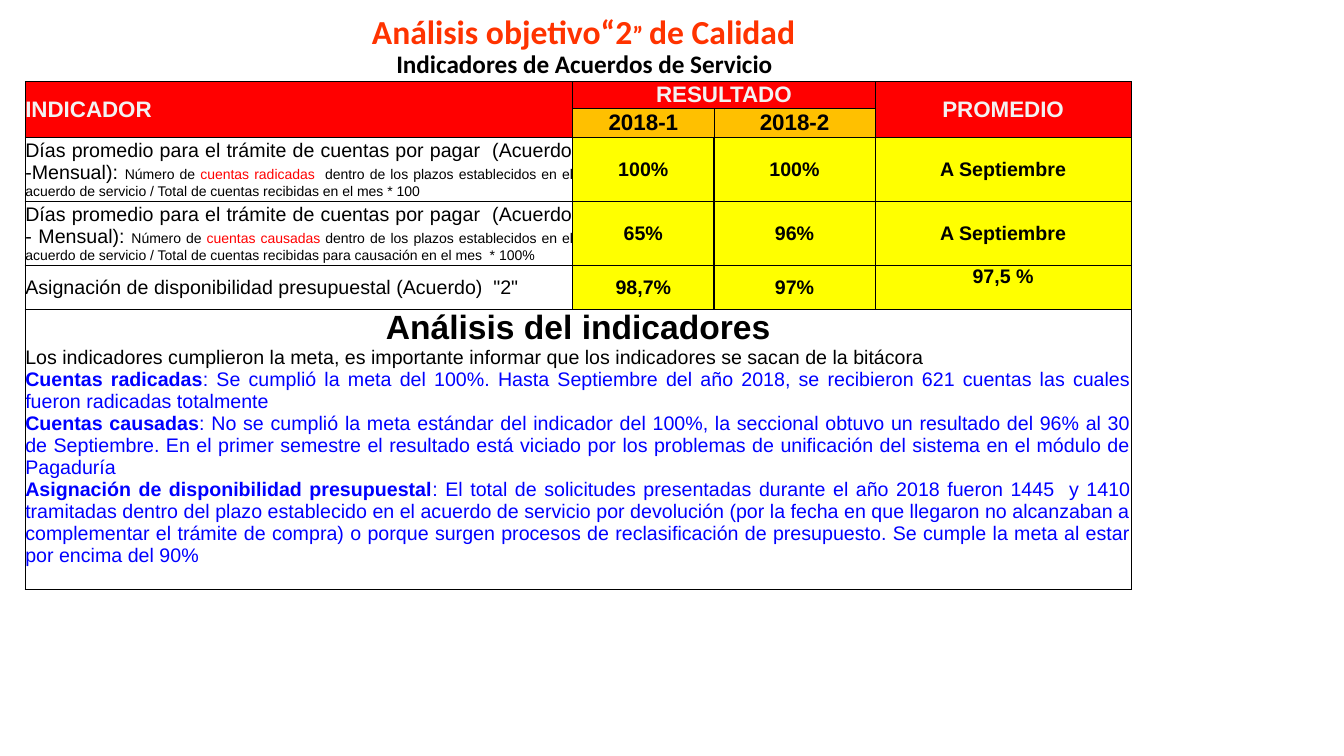
"""Build the slide on quality goal 2 with its table of service indicators."""
import dataclasses
import typing

import pptx
import pptx.dml.color
import pptx.enum.text
import pptx.oxml
import pptx.oxml.ns
import pptx.util

ALIGN = pptx.enum.text.PP_ALIGN
ANCHOR = pptx.enum.text.MSO_ANCHOR
WIDTH, HEIGHT = pptx.util.Inches(13.33), pptx.util.Inches(7.5)
COLS = (40.74, 10.5, 12, 19.05)
ROWS = (3.33, 3.87, 8, 8, 5.8, 37.07)


@dataclasses.dataclass(frozen=True)
class Theme:
    """Colours, fonts and type sizes of the slide."""
    title: str = "FF3300"
    black: str = "000000"
    white: str = "FFFFFF"
    pale: str = "F2F2F2"
    red: str = "FF0000"
    gold: str = "FFC000"
    lemon: str = "FFFF00"
    blue: str = "0000FF"
    body: str = "Arial"
    head: str = "Calibri"
    big: int = 24
    sub: int = 18
    label: int = 16
    text: int = 14
    note: int = 10


THEME = Theme()


class Run(typing.NamedTuple):
    """A stretch of text in one format."""
    text: str
    size: int = THEME.text
    color: str = THEME.black
    bold: bool = False
    font: str = THEME.body


class Para(typing.NamedTuple):
    """A paragraph, with None standing for a line break."""
    runs: tuple[Run | None, ...]
    align: ALIGN = ALIGN.JUSTIFY


class Cell(typing.NamedTuple):
    """A table cell with its place, span and look."""
    row: int
    col: int
    paras: tuple[Para, ...]
    fill: str
    down: int = 1
    over: int = 1
    anchor: ANCHOR = ANCHOR.MIDDLE


def across(share: float) -> int:
    """Turn a percentage of the slide width into a length."""
    return int(WIDTH * share / 100)


def along(share: float) -> int:
    """Turn a percentage of the slide height into a length."""
    return int(HEIGHT * share / 100)


def write(para, text: str, *, size: int, color: str, bold: bool, font: str) -> None:
    """Add a run of text in the given format."""
    run = para.add_run()
    run.text = text
    run.font.size = pptx.util.Pt(size)
    run.font.bold = bold
    run.font.name = font
    run.font.color.rgb = pptx.dml.color.RGBColor.from_string(color)


def fill_text(frame, paras: tuple[Para, ...], space: float = 1.0) -> None:
    """Write paragraphs into a text frame."""
    frame.word_wrap = True
    for count, item in enumerate(paras):
        para = frame.add_paragraph() if count else frame.paragraphs[0]
        para.alignment = item.align
        para.line_spacing = space
        for run in item.runs:
            if run is None:
                para.add_line_break()
            else:
                write(para, run.text, size=run.size, color=run.color,
                      bold=run.bold, font=run.font)


def edge(cell, width: float) -> None:
    """Draw the four borders ahead of the cell fill."""
    props = cell._tc.get_or_add_tcPr()
    for place, side in enumerate(("lnL", "lnR", "lnT", "lnB")):
        props.insert(place, pptx.oxml.parse_xml(
            f'<a:{side} {pptx.oxml.ns.nsdecls("a")} w="{pptx.util.Pt(width)}">'
            f'<a:solidFill><a:srgbClr val="{THEME.black}"/></a:solidFill></a:{side}>'))


def draw_cell(table, item: Cell) -> None:
    """Merge, paint and fill one cell of the table."""
    last_row, last_col = item.row + item.down - 1, item.col + item.over - 1
    cell = table.cell(item.row, item.col)
    if item.down > 1 or item.over > 1:
        cell.merge(table.cell(last_row, last_col))
    for row in range(item.row, last_row + 1):
        for col in range(item.col, last_col + 1):
            part = table.cell(row, col)
            part.fill.solid()
            part.fill.fore_color.rgb = pptx.dml.color.RGBColor.from_string(item.fill)
            edge(part, 0.5 if row < 2 else 1)
    cell.margin_left = cell.margin_right = cell.margin_top = cell.margin_bottom = 0
    cell.vertical_anchor = item.anchor
    fill_text(cell.text_frame, item.paras)


def head(row: int, col: int, text: str, down: int = 1, over: int = 1) -> Cell:
    """Describe a header cell."""
    color, fill = (THEME.black, THEME.gold) if row else (THEME.pale, THEME.red)
    align = ALIGN.CENTER if col else ALIGN.LEFT
    run = Run(text, THEME.label, color, True)
    return Cell(row, col, (Para((run,), align),), fill, down, over)


def score(row: int, col: int, text: str) -> Cell:
    """Describe a result cell."""
    anchor = ANCHOR.TOP if (row, col) == (4, 3) else ANCHOR.MIDDLE
    para = Para((Run(text, bold=True),), ALIGN.CENTER)
    return Cell(row, col, (para,), THEME.lemon, anchor=anchor)


def rule(name: str, key: str, rest: str) -> Para:
    """Describe an indicator and the formula behind it."""
    return Para((Run(name), Run("Número de ", THEME.note),
                 Run(key, THEME.note, THEME.red), Run(rest, THEME.note)))


def finding(name: str, rest: str) -> Para:
    """Describe a finding with a bold lead."""
    return Para((Run(name, color=THEME.blue, bold=True), Run(rest, color=THEME.blue)))


TITLE = Para((
    Run("Análisis objetivo“2", THEME.big, THEME.title, True, THEME.head),
    Run("” ", THEME.sub, THEME.title, True, THEME.head),
    Run("de Calidad ", THEME.big, THEME.title, True, THEME.head),
    None,
    Run("Indicadores de Acuerdos de Servicio ", THEME.sub, bold=True, font=THEME.head),
), ALIGN.CENTER)

HEADS = (head(0, 0, "INDICADOR", down=2), head(0, 1, "RESULTADO", over=2),
         head(0, 3, "PROMEDIO", down=2), head(1, 1, "2018-1"), head(1, 2, "2018-2"))

DATA = (
    (rule("Días promedio para el trámite de cuentas por pagar  (Acuerdo -Mensual): ",
          "cuentas radicadas", "  dentro de los plazos establecidos en el acuerdo de "
          "servicio / Total de cuentas recibidas en el mes * 100"),
     "100%", "100%", "A Septiembre"),
    (rule("Días promedio para el trámite de cuentas por pagar  (Acuerdo - Mensual): ",
          "cuentas causadas ", "dentro de los plazos establecidos en el acuerdo de "
          "servicio / Total de cuentas recibidas para causación en el mes  * 100%"),
     "65%", "96%", "A Septiembre"),
    (Para((Run('Asignación de disponibilidad presupuestal (Acuerdo)  "2"'),)),
     "98,7%", "97%", "97,5 %"),
)

REVIEW = Cell(5, 0, (
    Para((Run("Análisis del indicadores", THEME.big, bold=True),), ALIGN.CENTER),
    Para((Run("Los indicadores cumplieron la meta, es importante informar que los "
              "indicadores se sacan de la bitácora"),)),
    finding("Cuentas radicadas", ": Se cumplió la meta del 100%. Hasta Septiembre del "
            "año 2018, se recibieron 621 cuentas las cuales fueron radicadas totalmente"),
    finding("Cuentas causadas", ": No se cumplió la meta estándar del indicador del "
            "100%, la seccional obtuvo un resultado del 96% al 30 de Septiembre. En el "
            "primer semestre el resultado está viciado por los problemas de unificación "
            "del sistema en el módulo de Pagaduría"),
    finding("Asignación de disponibilidad presupuestal", ": El total de solicitudes "
            "presentadas durante el año 2018 fueron 1445  y 1410 tramitadas dentro del "
            "plazo establecido en el acuerdo de servicio por devolución (por la fecha en "
            "que llegaron no alcanzaban a complementar el trámite de compra) o porque "
            "surgen procesos de reclasificación de presupuesto. Se cumple la meta al "
            "estar por encima del 90%"),
), THEME.white, over=4, anchor=ANCHOR.TOP)


def main() -> None:
    """Draw the slide and save it."""
    deck = pptx.Presentation()
    deck.slide_width, deck.slide_height = WIDTH, HEIGHT
    shapes = deck.slides.add_slide(deck.slide_layouts[6]).shapes
    frame = shapes.add_textbox(across(3.23), along(8), across(80.95), along(9.2)).text_frame
    frame.vertical_anchor = ANCHOR.BOTTOM
    frame.margin_bottom = along(6.8)
    fill_text(frame, (TITLE,), 0.9)
    table = shapes.add_table(len(ROWS), len(COLS), across(1.88), along(10.8),
                             across(sum(COLS)), along(sum(ROWS))).table
    table.first_row = table.horz_banding = False
    for col, share in zip(table.columns, COLS):
        col.width = across(share)
    for row, share in zip(table.rows, ROWS):
        row.height = along(share)
    cells = [*HEADS, REVIEW]
    for row, (para, *marks) in enumerate(DATA, 2):
        cells.append(Cell(row, 0, (para,), THEME.white))
        cells += [score(row, col, mark) for col, mark in enumerate(marks, 1)]
    for cell in cells:
        draw_cell(table, cell)
    deck.save("out.pptx")


if __name__ == "__main__":
    main()
